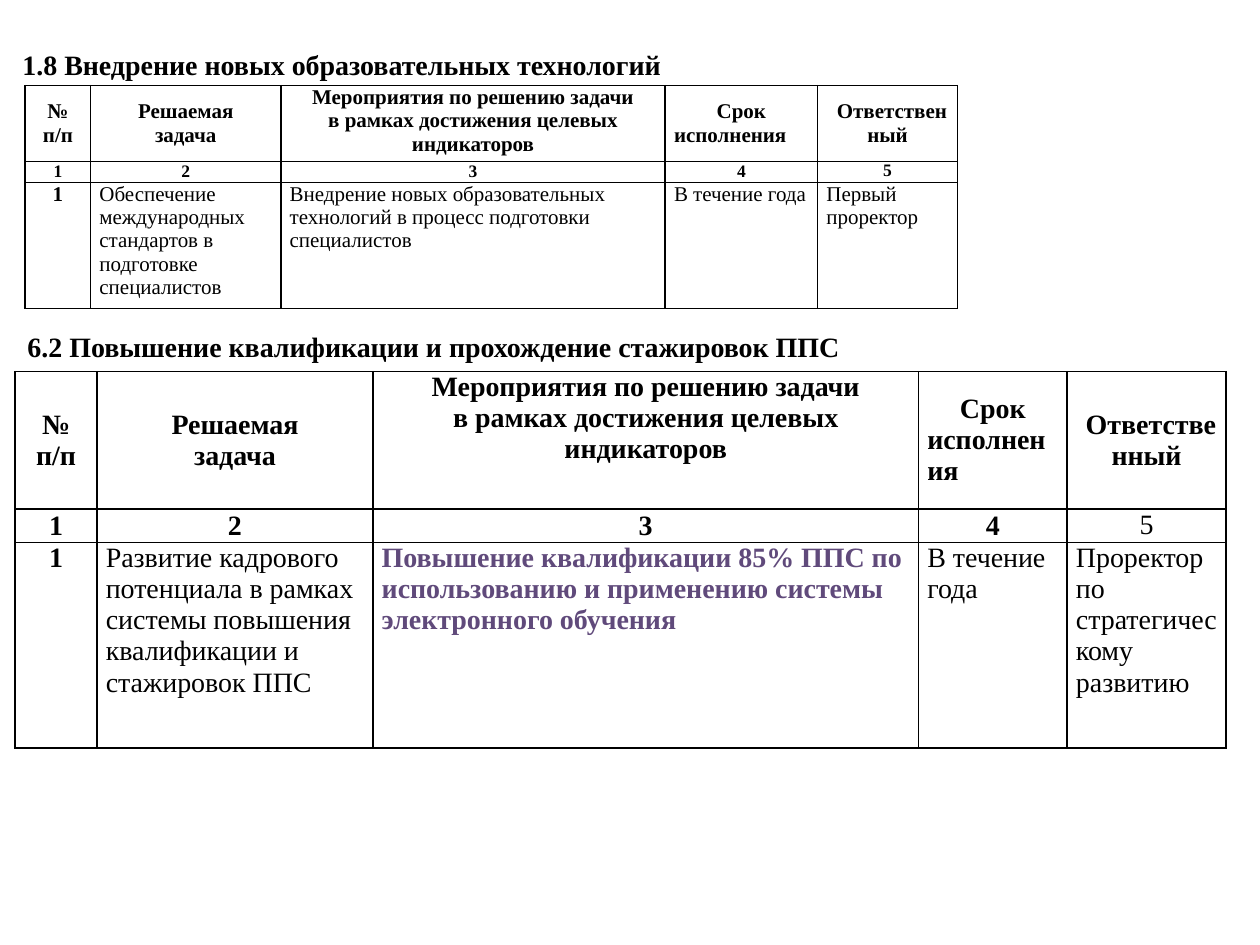
from lxml.etree import SubElement
from pptx import Presentation
from pptx.dml.color import RGBColor
from pptx.enum.text import MSO_ANCHOR, PP_ALIGN
from pptx.oxml import parse_xml
from pptx.oxml.ns import nsdecls
from pptx.util import Inches, Pt

COLORS = {"text": "000000", "border": "000000", "accent": "604A7B"}
FONT = "Times New Roman"
HEADERS = [
    "№ п/п",
    "Решаемая\nзадача",
    "Мероприятия по решению задачи\nв рамках достижения целевых\nиндикаторов",
    "Срок\nисполнения",
    "Ответственный",
]
NUMBERS = ["1", "2", "3", "4", "5"]
TECHNOLOGY_TASK = [
    "1",
    "Обеспечение международных стандартов в подготовке специалистов",
    "Внедрение новых образовательных технологий в процесс подготовки\nспециалистов",
    "В течение года",
    "Первый\nпроректор",
]
TRAINING_TASK = [
    "1",
    "Развитие кадрового потенциала в рамках системы повышения квалификации и стажировок ППС",
    "Повышение квалификации 85% ППС по использованию и применению системы электронного обучения",
    "В течение года",
    "Проректор по стратегическому развитию",
]


def style_font(font, size, bold, color="text"):
    """Apply the common typeface with the given size, weight and colour."""
    for attribute, value in {"name": FONT, "size": Pt(size), "bold": bold}.items():
        setattr(font, attribute, value)
    font.color.rgb = RGBColor.from_string(COLORS[color])


def add_heading(slide, text, left, top, width):
    """Add a section heading above its table."""
    heading = slide.shapes.add_textbox(Inches(left), Inches(top), Inches(width), Inches(0.37))
    frame = heading.text_frame
    frame.word_wrap = True
    frame.text = text
    style_font(frame.paragraphs[0].runs[0].font, 16, True)


def set_borders(cell):
    """Draw a thin line on all four sides of a cell."""
    properties = cell._tc.get_or_add_tcPr()
    for position, side in enumerate(("lnL", "lnR", "lnT", "lnB")):
        border = parse_xml(f'<a:{side} {nsdecls("a")} w="{Pt(1)}"><a:solidFill/></a:{side}>')
        SubElement(border[0], "{%s}srgbClr" % border.nsmap["a"], val=COLORS["border"])
        properties.insert(position, border)


def fill_cell(cell, text, size, bold, centered, middle, color="text"):
    """Write and format the text of one table cell."""
    cell_format = {
        "margin_left": Inches(0.07),
        "margin_right": Inches(0.07),
        "margin_top": 0,
        "margin_bottom": 0,
        "vertical_anchor": MSO_ANCHOR.MIDDLE if middle else MSO_ANCHOR.TOP,
    }
    for attribute, value in cell_format.items():
        setattr(cell, attribute, value)
    cell.fill.background()
    set_borders(cell)
    cell.text_frame.text = text
    for paragraph in cell.text_frame.paragraphs:
        paragraph.alignment = PP_ALIGN.CENTER if centered else PP_ALIGN.LEFT
        style_font(paragraph.runs[0].font, size, bold, color)


def add_plan(slide, left, top, widths, heights, task, sizes, plain=(), accents=()):
    """Add a plan table with a header row, a numbering row and a task row."""
    plan = slide.shapes.add_table(
        3, 5, Inches(left), Inches(top), Inches(sum(widths)), Inches(sum(heights))
    ).table
    plan.first_row = plan.horz_banding = False
    for column, width in zip(plan.columns, widths):
        column.width = Inches(width)
    for row, height in zip(plan.rows, heights):
        row.height = Inches(height)
    for r, (texts, size) in enumerate(zip((HEADERS, NUMBERS, task), sizes)):
        for c, text in enumerate(texts):
            label = r < 2 or c == 0
            accent = (r, c) in accents
            fill_cell(
                plan.cell(r, c), text, size,
                bold=(label or accent) and (r, c) not in plain,
                centered=label,
                middle=(r == 0 and c != 2) or (r == 1 and c != 4),
                color="accent" if accent else "text",
            )
    plan.cell(0, 3).text_frame.paragraphs[1].alignment = PP_ALIGN.LEFT
    responsible = plan.cell(0, 4).text_frame.paragraphs[0]
    responsible._p.get_or_add_pPr().set("indent", str(Inches(0.07)))


def main():
    """Build the slide with the two plan sections."""
    presentation = Presentation()
    presentation.slide_width, presentation.slide_height = Inches(10), Inches(7.5)
    slide = presentation.slides.add_slide(presentation.slide_layouts[6])
    add_heading(slide, "1.8 Внедрение новых образовательных технологий", 0.08, 0.33, 5.47)
    add_plan(
        slide, 0.2, 0.68, [0.52, 1.51, 3.05, 1.21, 1.11], [0.55, 0.15, 0.98],
        TECHNOLOGY_TASK, (12, 10, 12),
    )
    add_heading(slide, "6.2 Повышение квалификации и прохождение стажировок ППС", 0.12, 2.57, 9.53)
    add_plan(
        slide, 0.12, 2.95, [0.65, 2.19, 4.33, 1.18, 1.26], [1.09, 0.19, 1.63],
        TRAINING_TASK, (16, 16, 16), plain={(1, 4)}, accents={(2, 2)},
    )
    presentation.save("out.pptx")


if __name__ == "__main__":
    main()
